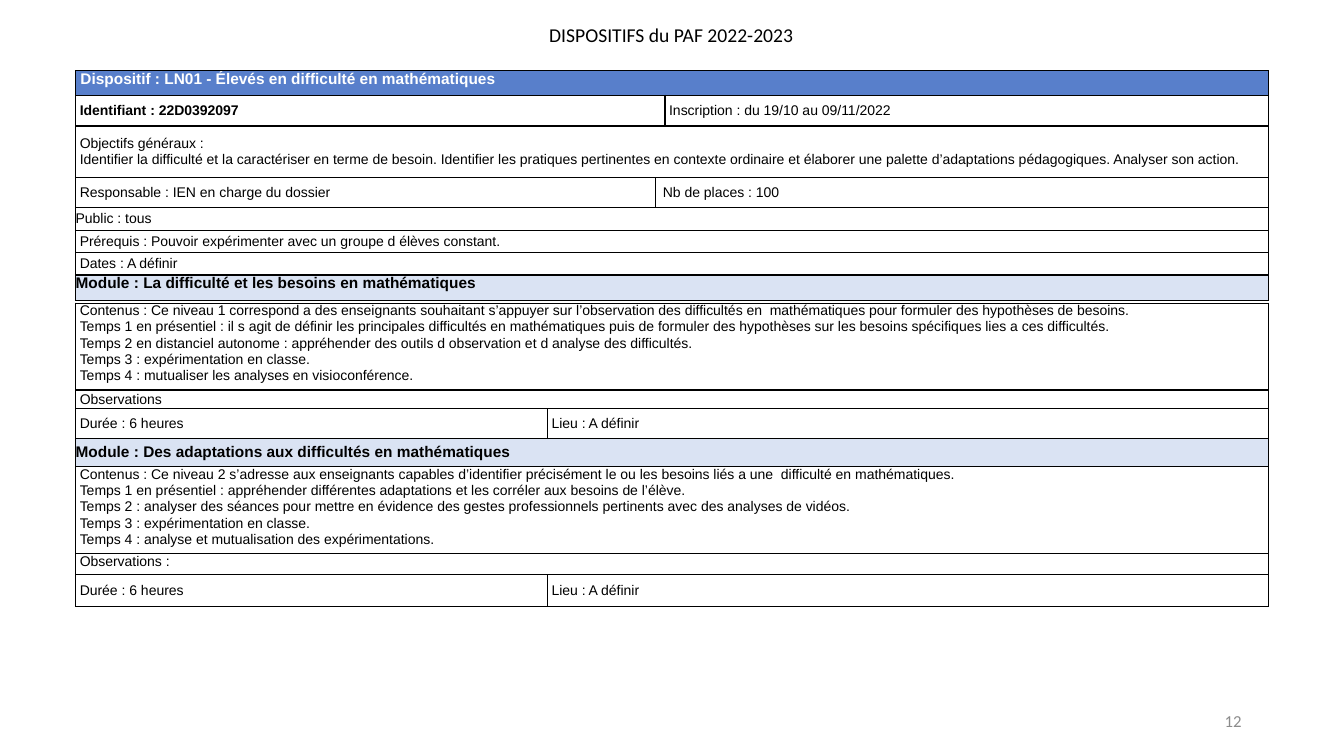
from dataclasses import dataclass

from lxml.etree import SubElement
from pptx import Presentation
from pptx.dml.color import RGBColor
from pptx.enum.text import MSO_ANCHOR, MSO_AUTO_SIZE, PP_ALIGN
from pptx.oxml.ns import qn
from pptx.util import Pt


@dataclass(frozen=True)
class Theme:
    black: str = "000000"
    white: str = "FFFFFF"
    grey: str = "8C8C8C"
    blue: str = "587FCB"
    pale: str = "DAE3F3"
    body: str = "Arial"
    label: str = "Calibri"
    title: int = 14
    head: int = 11
    text: int = 10
    number: int = 12
    line: int = 1


THEME = Theme()
TOP, MID = MSO_ANCHOR.TOP, MSO_ANCHOR.MIDDLE

PLAIN = {"font": {"size": THEME.text}}
BOLD = {"font": {"size": THEME.text, "bold": True}}
HEAD = {"font": {"size": THEME.head, "bold": True, "color": THEME.white},
        "fill": THEME.blue, "anchor": TOP, "left": 3.5}
MODULE = {"font": {"size": THEME.head, "bold": True},
          "fill": THEME.pale, "left": 0}
GOALS = {**PLAIN, "para": {"line_spacing": Pt(11.3), "space_before": Pt(0.2)}}
STEPS = {**PLAIN, "anchor": TOP,
         "para": {"line_spacing": 0.97, "space_before": Pt(0.9)}}


def assign(target, values):
    for name, value in values.items():
        setattr(target, name, value)


class Page:
    """Draws on one slide, with all lengths in points."""

    def __init__(self, deck, theme):
        self.theme = theme
        self.slide = deck.slides.add_slide(deck.slide_layouts[5])

    def style(self, font, size, color=None, bold=False, name=None):
        assign(font, {"size": Pt(size), "bold": bold,
                      "name": name or self.theme.body})
        font.color.rgb = RGBColor.from_string(color or self.theme.black)

    def title(self, text, box):
        shape = self.slide.shapes.title
        self.place(shape, box)
        self.label(shape, text, TOP, PP_ALIGN.CENTER,
                   self.theme.title, self.theme.black)

    def number(self, text, box):
        shape = self.slide.shapes.add_textbox(*map(Pt, box))
        self.label(shape, text, MID, PP_ALIGN.RIGHT,
                   self.theme.number, self.theme.grey)

    def place(self, shape, box):
        assign(shape, dict(zip(("left", "top", "width", "height"),
                               map(Pt, box))))

    def label(self, shape, text, anchor, align, size, color):
        frame = shape.text_frame
        assign(frame, {"text": text, "word_wrap": True,
                       "auto_size": MSO_AUTO_SIZE.NONE,
                       "vertical_anchor": anchor})
        para = frame.paragraphs[0]
        para.alignment = align
        self.style(para.runs[0].font, size, color, name=self.theme.label)

    def table(self, left, top, widths, rows):
        """Each row is (height, format, {first column: text}); a cell spans to the next."""
        heights = [row[0] for row in rows]
        box = (left, top, sum(widths), sum(heights))
        table = self.slide.shapes.add_table(
            len(rows), len(widths), *map(Pt, box)).table
        assign(table, {"first_row": False, "horz_banding": False})
        for column, width in zip(table.columns, widths):
            column.width = Pt(width)
        for r, (height, form, texts) in enumerate(rows):
            table.rows[r].height = Pt(height)
            for c in range(len(widths)):
                self.border(table.cell(r, c))
            starts = list(texts)
            for start, stop in zip(starts, starts[1:] + [len(widths)]):
                cell = table.cell(r, start)
                if stop - start > 1:
                    cell.merge(table.cell(r, stop - 1))
                self.cell(cell, texts[start], form)

    def cell(self, cell, text, form):
        if isinstance(text, tuple):
            text, form = text[0], {**form, **text[1]}
        assign(cell, {"text": text, "margin_left": Pt(form.get("left", 3)),
                      "margin_right": 0, "margin_top": 0, "margin_bottom": 0,
                      "vertical_anchor": form.get("anchor", MID)})
        cell.fill.solid()
        cell.fill.fore_color.rgb = RGBColor.from_string(
            form.get("fill", self.theme.white))
        for para in cell.text_frame.paragraphs:
            assign(para, form.get("para", {}))
            self.style(para.runs[0].font, **form["font"])

    def border(self, cell):
        props = cell._tc.get_or_add_tcPr()
        for side in "LRTB":
            line = SubElement(props, qn(f"a:ln{side}"),
                              w=str(Pt(self.theme.line)))
            fill = SubElement(line, qn("a:solidFill"))
            SubElement(fill, qn("a:srgbClr"), val=self.theme.black)


def build():
    deck = Presentation()
    assign(deck, {"slide_width": Pt(960), "slide_height": Pt(540)})
    page = Page(deck, THEME)
    page.title("DISPOSITIFS du PAF 2022-2023", (372, 13, 215, 24.5))
    page.number("12", (678, 500.5, 216, 29))

    left, halves = 54, (337, 515)
    venue = {0: "Durée : 6 heures", 1: "Lieu : A définir"}
    page.table(left, 50.5, (414, 7, 431), [
        (17.5, HEAD, {0: "Dispositif : LN01 - Élevés en difficulté en mathématiques"}),
        (22, PLAIN, {0: ("Identifiant : 22D0392097", BOLD),
                     2: "Inscription : du 19/10 au 09/11/2022"}),
        (37, GOALS, {0: "Objectifs généraux :\n"
                        "Identifier la difficulté et la caractériser en terme de besoin. "
                        "Identifier les pratiques pertinentes en contexte ordinaire et "
                        "élaborer une palette d’adaptations pédagogiques. "
                        "Analyser son action."}),
        (21.5, PLAIN, {0: "Responsable : IEN en charge du dossier",
                       1: ("Nb de places : 100", {"left": 5.5})}),
        (16, PLAIN, {0: ("Public : tous", {"left": 0})}),
        (16, PLAIN, {0: "Prérequis : Pouvoir expérimenter avec un groupe d élèves constant."}),
        (16, PLAIN, {0: "Dates : A définir"}),
        (18, MODULE, {0: ("Module : La difficulté et les besoins en mathématiques",
                          {"anchor": TOP})}),
    ])
    page.table(left, 216.5, halves, [
        (62, STEPS, {0: "Contenus : Ce niveau 1 correspond a des enseignants souhaitant "
                        "s’appuyer sur l’observation des difficultés en  mathématiques "
                        "pour formuler des hypothèses de besoins.\n"
                        "Temps 1 en présentiel : il s agit de définir les principales "
                        "difficultés en mathématiques puis de formuler des hypothèses "
                        "sur les besoins spécifiques lies a ces difficultés.\n"
                        "Temps 2 en distanciel autonome : appréhender des outils "
                        "d observation et d analyse des difficultés.\n"
                        "Temps 3 : expérimentation en classe.\n"
                        "Temps 4 : mutualiser les analyses en visioconférence."}),
        (13.5, PLAIN, {0: "Observations"}),
        (21, PLAIN, venue),
        (20, MODULE, {0: "Module : Des adaptations aux difficultés en mathématiques"}),
    ])
    page.table(left, 333.5, halves, [
        (62, STEPS, {0: "Contenus : Ce niveau 2 s’adresse aux enseignants capables "
                        "d’identifier précisément le ou les besoins liés a une  "
                        "difficulté en mathématiques.\n"
                        "Temps 1 en présentiel : appréhender différentes adaptations "
                        "et les corréler aux besoins de l’élève.\n"
                        "Temps 2 : analyser des séances pour mettre en évidence des "
                        "gestes professionnels pertinents avec des analyses de vidéos.\n"
                        "Temps 3 : expérimentation en classe.\n"
                        "Temps 4 : analyse et mutualisation des expérimentations."}),
        (15, PLAIN, {0: ("Observations :", {"anchor": TOP})}),
        (23, PLAIN, venue),
    ])
    deck.save("out.pptx")


if __name__ == "__main__":
    build()
